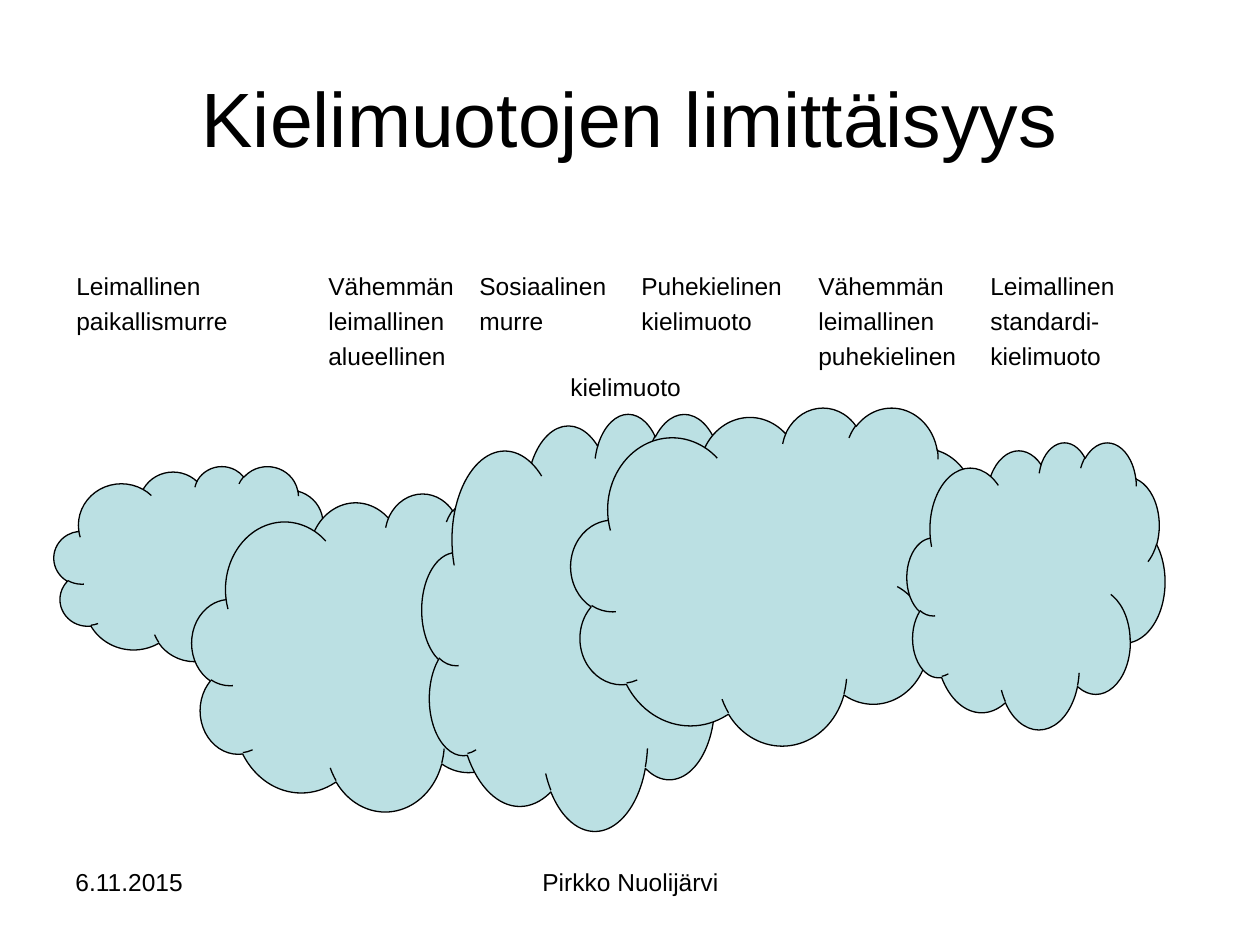
from lxml.etree import SubElement
from pptx import Presentation
from pptx.dml.color import RGBColor
from pptx.enum.shapes import MSO_SHAPE as Shape
from pptx.enum.text import MSO_ANCHOR as Anchor, PP_ALIGN as Align
from pptx.oxml.ns import qn
from pptx.util import Pt

BLACK = RGBColor(0, 0, 0)
PALE_BLUE = RGBColor(0xBB, 0xE0, 0xE3)
PX = 914400 / 126


def px(*lengths):
    return [round(length * PX) for length in lengths]


def write(frame, lines, size, align=Align.LEFT):
    frame.word_wrap = True
    frame.text = "\n".join(lines)
    for paragraph in frame.paragraphs:
        paragraph.alignment = align
        font = paragraph.runs[0].font
        font.name, font.size, font.color.rgb = "Arial", Pt(size), BLACK


prs = Presentation()
prs.slide_width, prs.slide_height = px(1260, 945)
slide = prs.slides.add_slide(prs.slide_layouts[5])
shapes = slide.shapes

# Title
title = shapes.title
title.left, title.top, title.width, title.height = px(63, 38, 1134, 157)
title.text_frame.vertical_anchor = Anchor.MIDDLE
write(title.text_frame, ["Kielimuotojen limittäisyys"], 44, Align.CENTER)

# Language varieties in tabbed columns; the last line is a wrapped word
COLUMNS = [252, 403, 565, 742, 914]
varieties = [
    ("Leimallinen\tVähemmän\tSosiaalinen\tPuhekielinen\tVähemmän\tLeimallinen", 3, COLUMNS),
    ("paikallismurre\tleimallinen\tmurre\tkielimuoto\tleimallinen\tstandardi-", 3, COLUMNS),
    ("\talueellinen\t\t\tpuhekielinen\tkielimuoto", 3, COLUMNS),
    ("\tkielimuoto", 1, [494]),
]
labels = shapes.add_textbox(*px(64, 265, 1196, 580)).text_frame
write(labels, [line for line, _, _ in varieties], 14)
for paragraph, (_, gap, stops) in zip(labels.paragraphs, varieties):
    paragraph.space_before = Pt(gap)
    tabs = SubElement(paragraph._p.get_or_add_pPr(), qn("a:tabLst"))
    for stop in px(*stops):
        SubElement(tabs, qn("a:tab"), pos=str(stop), algn="l")

# Date and author
for text, left, width, align in [
    ("6.11.2015", 63, 294, Align.LEFT),
    ("Pirkko Nuolijärvi", 431, 399, Align.CENTER),
]:
    footer = shapes.add_textbox(*px(left, 861, width, 66))
    write(footer.text_frame, [text], 14, align)

# Overlapping clouds, from local dialect to standard language
for bounds in [
    (54, 466, 275, 195),
    (192, 493, 378, 318),
    (422, 413, 338, 417),
    (571, 407, 413, 338),
    (907, 442, 258, 287),
]:
    cloud = shapes.add_shape(Shape.CLOUD, *px(*bounds))
    cloud.shadow.inherit = False
    cloud.fill.solid()
    cloud.fill.fore_color.rgb = PALE_BLUE
    cloud.line.color.rgb = BLACK
    cloud.line.width = Pt(0.75)

prs.save("out.pptx")
